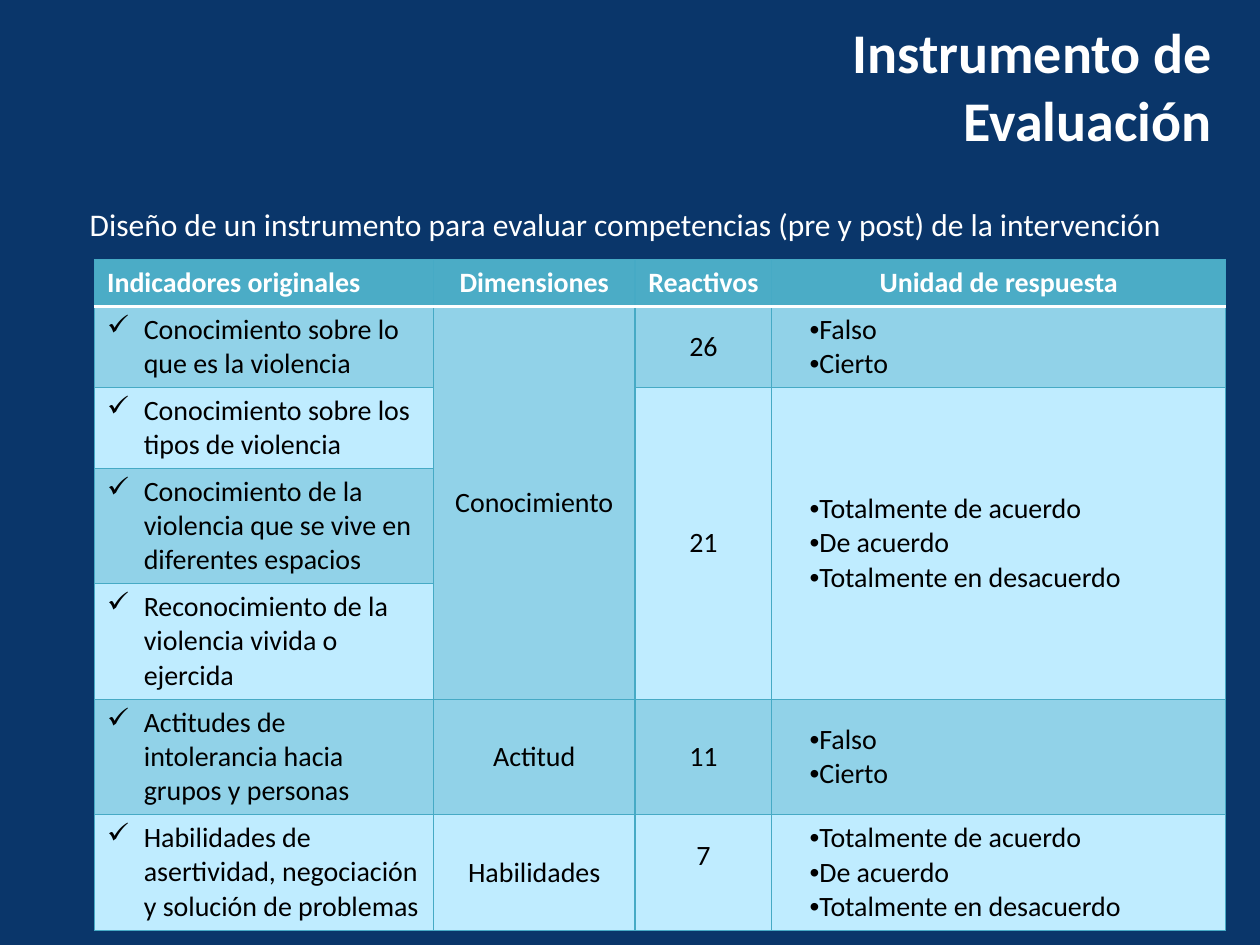
"""Build the evaluation instrument slide with its table of indicators."""
from lxml import etree
from pptx import Presentation
from pptx.dml.color import RGBColor
from pptx.enum.text import MSO_ANCHOR as ANCHOR, MSO_AUTO_SIZE as AUTO, PP_ALIGN as ALIGN
from pptx.oxml import parse_xml
from pptx.oxml.ns import nsdecls, qn
from pptx.util import Pt

NAVY = RGBColor(0x0A, 0x36, 0x6A)
WHITE = RGBColor(0xFF, 0xFF, 0xFF)
BLACK = RGBColor(0x00, 0x00, 0x00)
TEAL = RGBColor(0x4B, 0xAC, 0xC6)
BORDER = RGBColor(0x46, 0xAA, 0xC5)
BAND_DARK = RGBColor(0x91, 0xD2, 0xE8)
BAND_LIGHT = RGBColor(0xBF, 0xEC, 0xFF)

FONT = "Calibri"
CHECK = ("✓", "Wingdings 2", 21, -21)
DOT = ("•", "Arial", 0, 14.4)
YES_NO = ["Falso", "Cierto"]
AGREEMENT = ["Totalmente de acuerdo", "De acuerdo", "Totalmente en desacuerdo"]
HEADERS = ["Indicadores originales", "Dimensiones", "Reactivos", "Unidad de respuesta"]
ROWS = [
    ("Conocimiento sobre lo que es la violencia", "Conocimiento", "26", YES_NO),
    ("Conocimiento sobre los tipos de violencia", "", "21", AGREEMENT),
    ("Conocimiento de la violencia que se vive en diferentes espacios", "", "", []),
    ("Reconocimiento de la violencia vivida o ejercida", "", "", []),
    ("Actitudes de intolerancia hacia grupos y personas", "Actitud", "11", YES_NO),
    ("Habilidades de asertividad, negociación y solución de problemas",
     "Habilidades", "7", AGREEMENT),
]
COL_WIDTHS = [193.7, 115.2, 78.2, 259.4]
ROW_HEIGHTS = [26.8, 46.3, 46.3, 66, 66, 66, 66]
MERGES = [(1, 1, 4), (2, 2, 4), (2, 3, 4)]


def add_run(p, text, size, color, bold=False):
    r = p.add_run()
    r.text = text
    r.font.name, r.font.size, r.font.bold = FONT, Pt(size), bold
    r.font.color.rgb = color
    return r


def fill_cell(cell, lines, color, bold, align, bullet, below):
    tcPr = cell._tc.get_or_add_tcPr()
    for side in ("lnL", "lnR", "lnT", "lnB"):
        line, width = below if side == "lnB" else (BORDER, 0.75)
        tcPr.append(parse_xml(
            f'<a:{side} {nsdecls("a")} w="{Pt(width)}"><a:solidFill>'
            f'<a:srgbClr val="{line}"/></a:solidFill></a:{side}>'))
    tf = cell.text_frame
    for i, text in enumerate(lines):
        p = tf.paragraphs[0] if i == 0 else tf.add_paragraph()
        p.alignment = align
        if bullet:
            char, face, margin, indent = bullet
            pPr = p._p.get_or_add_pPr()
            pPr.set("marL", str(Pt(margin)))
            pPr.set("indent", str(Pt(indent)))
            if bullet is DOT:
                etree.SubElement(pPr, qn("a:buFont"), typeface=face)
            etree.SubElement(pPr, qn("a:buChar"), char=char)
        add_run(p, text, 16, color, bold)


prs = Presentation()
prs.slide_width, prs.slide_height = Pt(720), Pt(540)
s = prs.slides.add_slide(prs.slide_layouts[5])
s.background.fill.solid()
s.background.fill.fore_color.rgb = NAVY

title = s.shapes.title
title.left, title.top, title.width, title.height = Pt(133.2), Pt(3.6), Pt(566.6), Pt(90)
tf = title.text_frame
tf.auto_size, tf.vertical_anchor = AUTO.NONE, ANCHOR.MIDDLE
p = tf.paragraphs[0]
p.alignment = ALIGN.RIGHT
add_run(p, "Instrumento de", 32, WHITE, True)
p.add_line_break()
add_run(p, "Evaluación", 32, WHITE, True)

subtitle = s.shapes.add_textbox(Pt(14.4), Pt(111.6), Pt(686.2), Pt(28.1))
tf = subtitle.text_frame
tf.word_wrap, tf.vertical_anchor = True, ANCHOR.MIDDLE
p = tf.paragraphs[0]
p.alignment, p.line_spacing = ALIGN.CENTER, 1.2
r = add_run(p, "Diseño de un instrumento para evaluar competencias (pre y post) de la intervención",
            18, WHITE)
r.font.fill._xPr.find(qn("a:solidFill")).addnext(parse_xml(
    f'<a:effectLst {nsdecls("a")}><a:outerShdw blurRad="38100" dist="38100" dir="2700000">'
    '<a:srgbClr val="000000"><a:alpha val="43000"/></a:srgbClr></a:outerShdw></a:effectLst>'))

table = s.shapes.add_table(7, 4, Pt(54), Pt(148.2), Pt(sum(COL_WIDTHS)),
                           Pt(sum(ROW_HEIGHTS))).table
for col, width in zip(table.columns, COL_WIDTHS):
    col.width = Pt(width)
for row, height in zip(table.rows, ROW_HEIGHTS):
    row.height = Pt(height)

for i, values in enumerate([HEADERS] + ROWS):
    for j, value in enumerate(values):
        header = i == 0
        cell = table.cell(i, j)
        lines = value if isinstance(value, list) else [value] if value else []
        bullet = None if header else (CHECK, None, None, DOT)[j]
        align = ALIGN.LEFT if j == 0 or bullet else ALIGN.CENTER
        fill_cell(cell, lines, WHITE if header else BLACK, header, align, bullet,
                  (WHITE, 2) if header else (BORDER, 0.75))
        cell.vertical_anchor = ANCHOR.TOP if header or j == 0 else ANCHOR.MIDDLE
        cell.fill.solid()
        cell.fill.fore_color.rgb = TEAL if header else BAND_DARK if i % 2 else BAND_LIGHT

for top, col, bottom in MERGES:
    table.cell(top, col).merge(table.cell(bottom, col))
table.cell(6, 2).margin_bottom = Pt(23)

prs.save("out.pptx")
